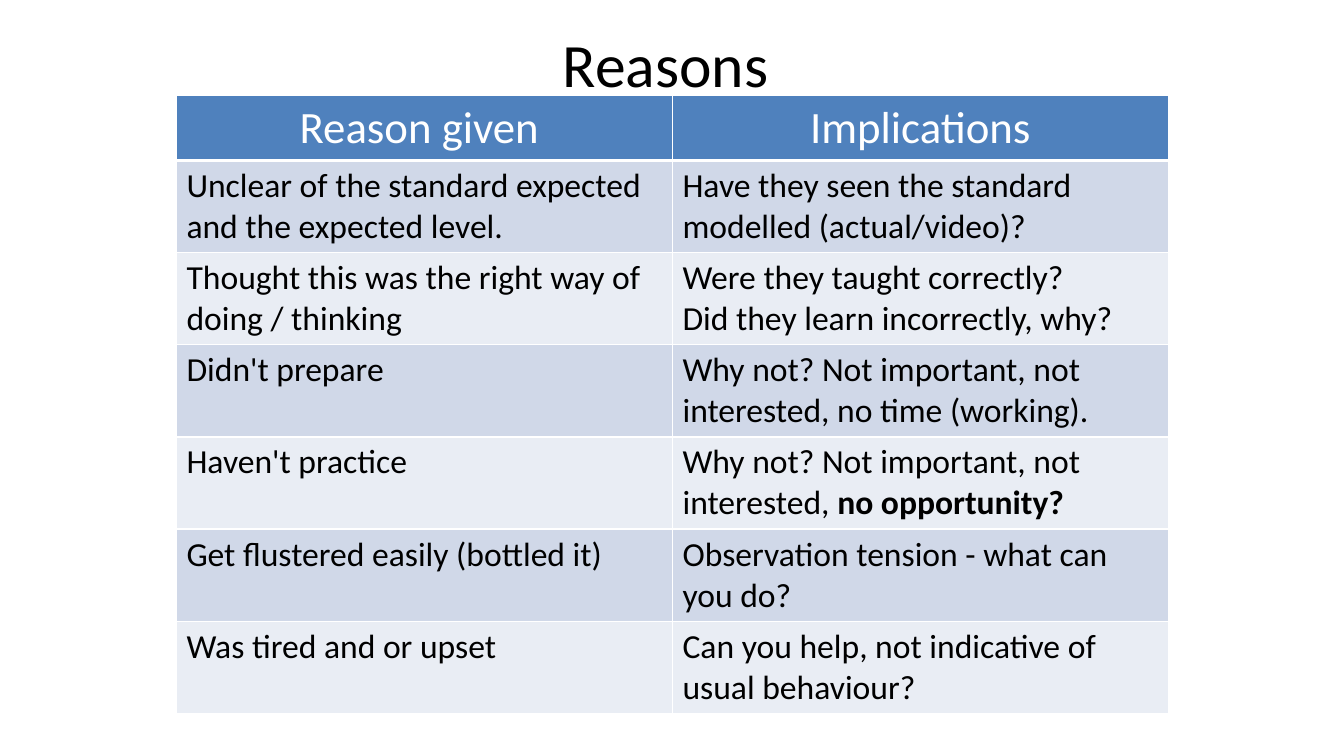
"""Build the Reasons slide."""
from lxml.etree import SubElement
from pptx import Presentation
from pptx.dml.color import RGBColor
from pptx.enum.text import MSO_ANCHOR, PP_ALIGN
from pptx.oxml.ns import qn
from pptx.util import Inches, Pt

BLACK = RGBColor(0x00, 0x00, 0x00)
WHITE = RGBColor(0xFF, 0xFF, 0xFF)
BLUE = RGBColor(0x4F, 0x81, 0xBD)
BANDS = [RGBColor(0xE9, 0xED, 0xF4), RGBColor(0xD0, 0xD8, 0xE8)]
FONT = "Calibri"

HEADS = ["Reason given ", "Implications"]
REASONS = [
    ("Unclear of the standard expected and the expected level.",
     [["Have they seen the standard modelled (actual/video)?"]]),
    ("Thought this was the right way of doing / thinking",
     [["Were they taught correctly?"], ["Did they learn incorrectly, why?"]]),
    ("Didn't prepare",
     [["Why not? Not important, not interested, no time (working)."]]),
    ("Haven't practice",
     [["Why not? Not important, not interested, ", "no opportunity?"]]),
    ("Get flustered easily (bottled it)",
     [["Observation tension - what can you do?"]]),
    ("Was tired and or upset",
     [["Can you help, not indicative of usual behaviour?"]]),
]


def add_text(frame, paras, size, color, align):
    """Write paragraphs run by run; every run after the first is bold."""
    for index, runs in enumerate(paras):
        para = frame.add_paragraph() if index else frame.paragraphs[0]
        para.alignment = align
        for place, words in enumerate(runs):
            run = para.add_run()
            run.text = words
            font = run.font
            font.name, font.size, font.bold = FONT, Pt(size), place > 0
            font.color.rgb = color


def add_edges(cell, widths):
    """Draw white borders in points, keyed by side."""
    props = cell._tc.get_or_add_tcPr()
    for side, width in widths.items():
        line = SubElement(props, qn(f"a:ln{side}"), w=str(Pt(width)))
        fill = SubElement(line, qn("a:solidFill"))
        SubElement(fill, qn("a:srgbClr"), val=str(WHITE))


def fill_cell(cell, paras, size, color, align, fill, top, bottom):
    """Give a cell its borders, fill and text."""
    add_edges(cell, {"L": 1, "R": 1, "T": top, "B": bottom})
    cell.fill.solid()
    cell.fill.fore_color.rgb = fill
    add_text(cell.text_frame, paras, size, color, align)


def add_title(slide, words):
    """Place and fill the title."""
    title = slide.shapes.title
    title.left, title.top = Inches(0.67), Inches(0)
    title.width, title.height = Inches(12), Inches(1.25)
    title.text_frame.vertical_anchor = MSO_ANCHOR.MIDDLE
    add_text(title.text_frame, [[words]], 44, BLACK, PP_ALIGN.CENTER)


def add_grid(slide):
    """Add the table of reasons and implications."""
    table = slide.shapes.add_table(
        len(REASONS) + 1, len(HEADS), Inches(1.75), Inches(0.95),
        Inches(9.84), Inches(6.09)).table
    for row in table.rows:
        row.height = Inches(0.91)
    table.rows[0].height = Inches(0.63)
    for col, head in enumerate(HEADS):
        fill_cell(table.cell(0, col), [[head]], 32, WHITE,
                  PP_ALIGN.CENTER, BLUE, 1, 3)
    for row, (reason, notes) in enumerate(REASONS, 1):
        for col, paras in enumerate([[[reason]], notes]):
            fill_cell(table.cell(row, col), paras, 24, BLACK,
                      PP_ALIGN.LEFT, BANDS[row % 2], 3 if row == 1 else 1, 1)


def main():
    """Build and save the slide."""
    deck = Presentation()
    deck.slide_width, deck.slide_height = Inches(13.33), Inches(7.5)
    slide = deck.slides.add_slide(deck.slide_layouts[5])
    add_title(slide, "Reasons ")
    add_grid(slide)
    deck.save("out.pptx")


if __name__ == "__main__":
    main()
